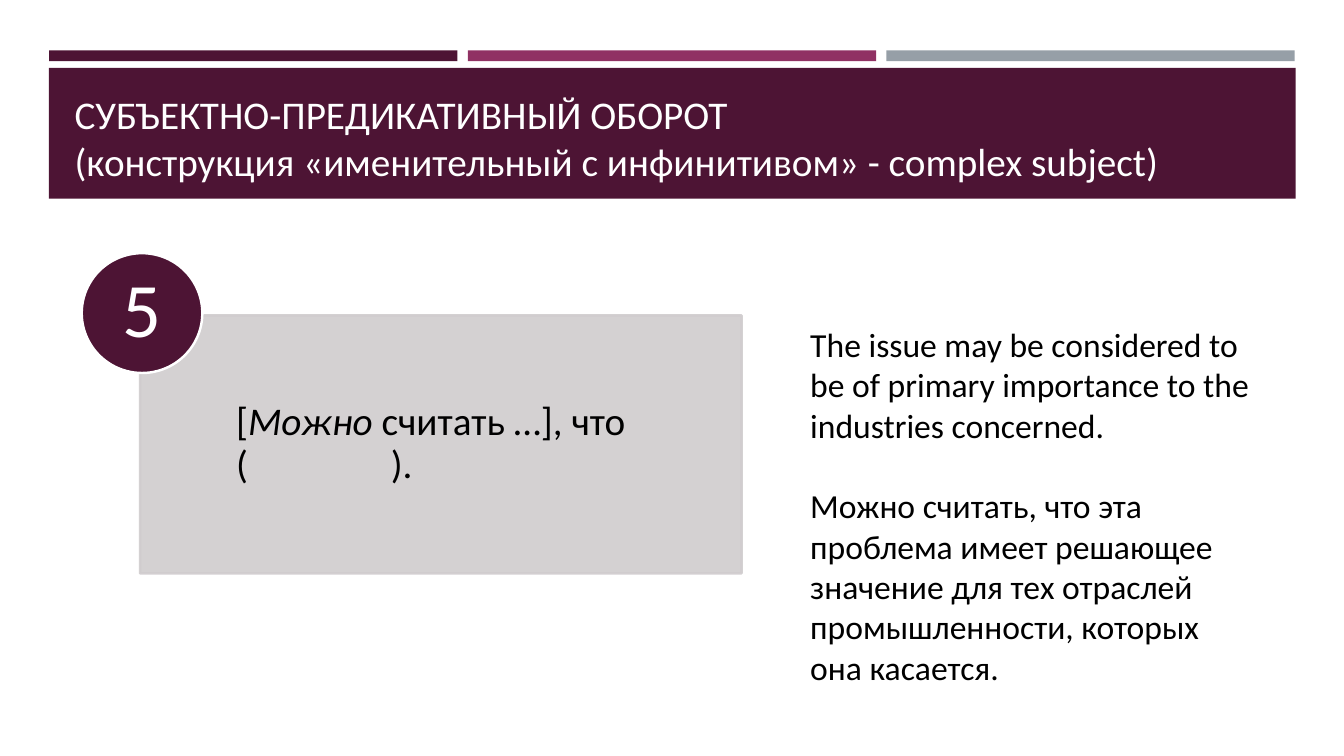
from lxml import etree
from pptx import Presentation
from pptx.dml.color import RGBColor
from pptx.enum.shapes import MSO_SHAPE
from pptx.enum.text import MSO_ANCHOR, MSO_UNDERLINE, PP_ALIGN
from pptx.oxml.ns import qn
from pptx.util import Cm, Pt

RECT, OVAL = MSO_SHAPE.RECTANGLE, MSO_SHAPE.OVAL
TOP, MIDDLE, BOTTOM = MSO_ANCHOR.TOP, MSO_ANCHOR.MIDDLE, MSO_ANCHOR.BOTTOM
HEAVY, DOUBLE = MSO_UNDERLINE.HEAVY_LINE, MSO_UNDERLINE.DOUBLE_LINE

PLUM = RGBColor(0x4D, 0x14, 0x34)
BERRY = RGBColor(0x90, 0x31, 0x63)
SLATE = RGBColor(0x96, 0x9F, 0xA7)
PALE = RGBColor(0xD0, 0xCC, 0xCE)
WHITE = RGBColor(0xFF, 0xFF, 0xFF)
BLACK = RGBColor(0, 0, 0)


class SlideBuilder:
    font = "Calibri"

    def __init__(self, slide):
        self.slide = slide

    def shape(self, kind, x, y, w, h, fill, line=None, opacity=100):
        sp = self.slide.shapes.add_shape(kind, Cm(x), Cm(y), Cm(w), Cm(h))
        sp.shadow.inherit = False
        sp.fill.solid()
        sp.fill.fore_color.rgb = fill
        if line is None:
            sp.line.fill.background()
        else:
            sp.line.color.rgb = line
            sp.line.width = Pt(1.75)
        if opacity < 100:
            for color in sp._element.spPr.iter(qn("a:srgbClr")):
                etree.SubElement(color, qn("a:alpha"), val=str(opacity * 1000))
        return sp

    def text(self, x, y, w, h, text, size, color=BLACK, anchor=TOP,
             margins=(0.25, 0.13, 0.25, 0.13)):
        sp = self.slide.shapes.add_textbox(Cm(x), Cm(y), Cm(w), Cm(h))
        tf = sp.text_frame
        tf.word_wrap = True
        tf.vertical_anchor = anchor
        (tf.margin_left, tf.margin_top,
         tf.margin_right, tf.margin_bottom) = map(Cm, margins)
        tf.text = text
        for p in tf.paragraphs:
            for r in p.runs:
                self.style(r, size, color)
        return tf

    def style(self, r, size, color, italic=None, underline=None):
        r.font.name = self.font
        r.font.size = Pt(size)
        r.font.color.rgb = color
        r.font.italic = italic
        r.font.underline = underline

    def tab_stops(self, p, positions):
        tabs = etree.SubElement(p._p.get_or_add_pPr(), qn("a:tabLst"))
        for pos in positions:
            etree.SubElement(tabs, qn("a:tab"), pos=str(Cm(pos)), algn="l")


def add_header(b):
    for i, color in enumerate((PLUM, BERRY, SLATE)):
        b.shape(RECT, 1.24 + i * 10.55, 1.27, 10.29, 0.27, color)
    b.shape(RECT, 1.23, 1.71, 31.42, 3.3, PLUM)
    b.text(1.63, 1.96, 30.63, 2.82,
           "СУБЪЕКТНО-ПРЕДИКАТИВНЫЙ ОБОРОТ\v"
           "(конструкция «именительный с инфинитивом» - complex subject)",
           28, WHITE, BOTTOM)


def add_pattern(b):
    """Sentence scheme: underlined tabs stand for subject and predicate."""
    b.shape(RECT, 3.53, 7.95, 15.16, 6.5, PALE, PALE, 90)
    tf = b.text(5.95, 7.95, 12.73, 6.5, "", 28, anchor=MIDDLE,
                margins=(0, 0.56, 0.56, 0.56))
    p = tf.paragraphs[0]
    p.line_spacing = 0.9
    b.tab_stops(p, (0.53, 1.87, 2.3, 3.64, 3.9))
    for text, italic, underline in (
            ("[", None, None), ("Можно", True, None),
            (" считать …], что", None, None), ("\v", None, None),
            ("(\t", None, None), ("\t", None, HEAVY), ("\t", None, None),
            ("\t", None, DOUBLE), ("\t).", None, None)):
        if text == "\v":
            p.add_line_break()
            continue
        r = p.add_run()
        r.text = text
        b.style(r, 28, BLACK, italic, underline)


def add_number(b):
    b.shape(OVAL, 2.06, 6.38, 3.04, 3.02, PLUM, WHITE)
    p = b.text(2.49, 6.81, 2.16, 2.13, "5", 55, WHITE, MIDDLE,
               (0, 0, 0, 0)).paragraphs[0]
    p.alignment = PP_ALIGN.CENTER
    p.line_spacing = 0.9


def add_example(b):
    tf = b.text(20.17, 8.03, 11.76, 9.5,
                "The issue may be considered to be of primary importance "
                "to the industries concerned.\n"
                "Можно считать, что эта проблема имеет решающее значение "
                "для тех отраслей промышленности, которых она касается.", 24)
    tf.paragraphs[1].space_before = Pt(29)


def main():
    prs = Presentation()
    prs.slide_width, prs.slide_height = Cm(33.87), Cm(19.05)
    b = SlideBuilder(prs.slides.add_slide(prs.slide_layouts[6]))
    add_header(b)
    add_pattern(b)
    add_number(b)
    add_example(b)
    prs.save("out.pptx")


if __name__ == "__main__":
    main()
